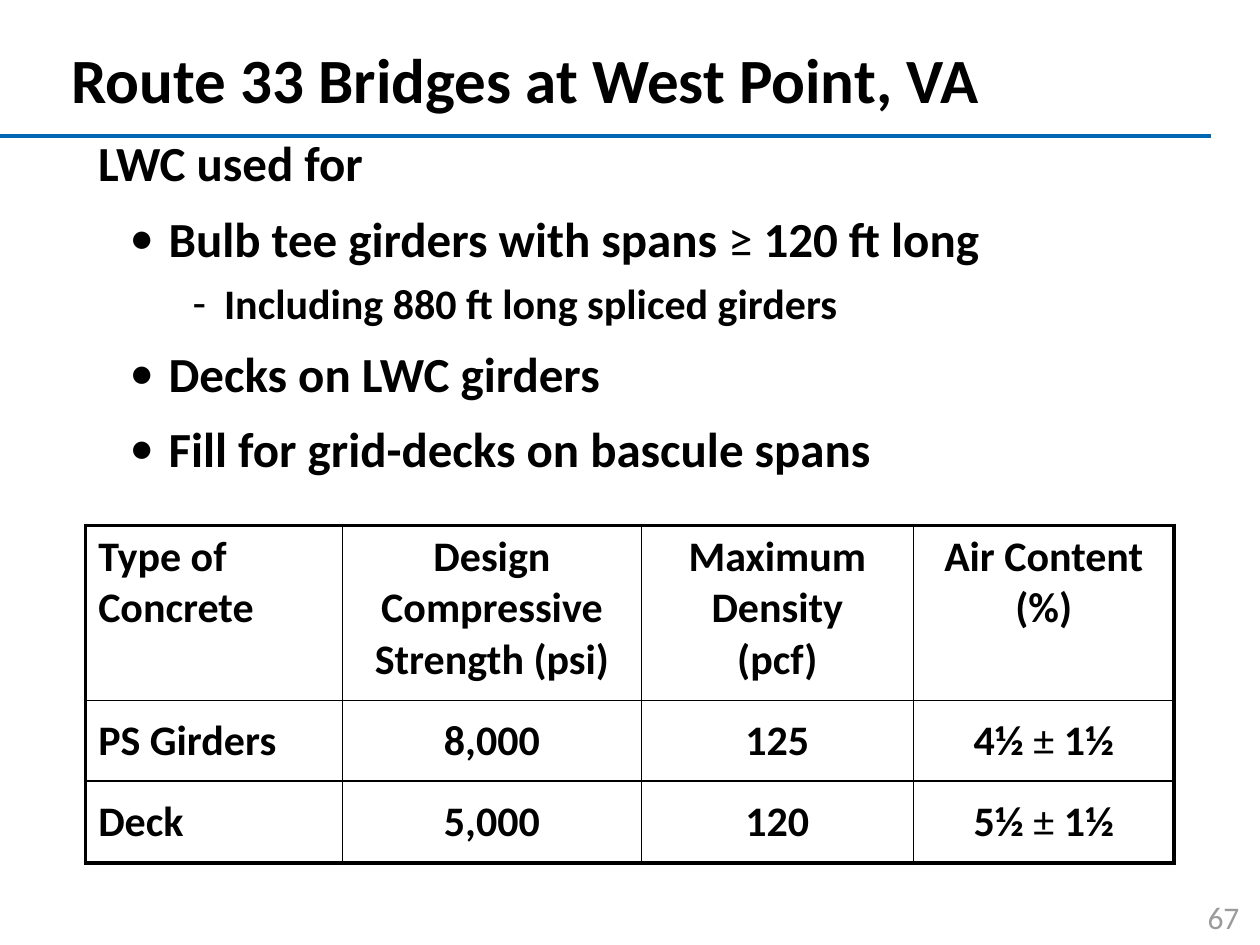
from dataclasses import dataclass

from lxml import etree
from pptx import Presentation
from pptx.dml.color import RGBColor
from pptx.enum.shapes import MSO_CONNECTOR
from pptx.enum.text import MSO_ANCHOR, PP_ALIGN
from pptx.oxml.ns import qn
from pptx.util import Inches, Pt

STRAIGHT = MSO_CONNECTOR.STRAIGHT
LEFT, CENTER = PP_ALIGN.LEFT, PP_ALIGN.CENTER
TOP, MIDDLE = MSO_ANCHOR.TOP, MSO_ANCHOR.MIDDLE


@dataclass(frozen=True)
class Theme:
    """Colours, font and sizes of the slide."""
    font: str = "Calibri"
    ink: str = "000000"
    rule: str = "0068B3"
    muted: str = "9B9B9B"
    title: int = 36
    body: int = 28
    detail: int = 24
    number: int = 18
    thick: float = 2.25
    thin: float = 1


THEME = Theme()
LIGHT_SYMBOLS = ("≥", "± ")
BULLETS = {1: ("•", 0.56, -0.31), 2: ("‐", 1, -0.25)}
POINTS = [
    (0, THEME.body, 0, ["LWC used for"]),
    (1, THEME.body, 9.8, ["Bulb tee girders with spans ", "≥", " 120 ft long"]),
    (2, THEME.detail, 6, ["Including 880 ft long spliced girders"]),
    (1, THEME.body, 9, ["Decks on LWC girders"]),
    (1, THEME.body, 9, ["Fill for grid-decks on bascule spans"]),
]
COLUMN_WIDTHS = [2.04, 2.37, 2.16, 2.07]
ROW_HEIGHTS = [1.39, 0.64, 0.65]
CONCRETE_ROWS = [
    [["Type of Concrete"], ["Design Compressive Strength (psi)"],
     ["Maximum Density\v(pcf)"], ["Air Content\v(%)"]],
    [["PS Girders"], ["8,000"], ["125"], ["4½ ", "± ", "1½"]],
    [["Deck"], ["5,000"], ["120"], ["5½ ", "± ", "1½"]],
]


def style_run(run, size, color=THEME.ink, bold=True):
    """Apply the theme font to a run."""
    run.font.name = THEME.font
    run.font.size = Pt(size)
    run.font.bold = bold
    run.font.color.rgb = RGBColor.from_string(color)


def write_spans(para, spans, size):
    """Write bold spans, leaving mathematical symbols light."""
    para.text = spans[0]
    for span in spans[1:]:
        para.add_run().text = span
    for run in para.runs:
        style_run(run, size, bold=run.text not in LIGHT_SYMBOLS)


def add_box(page, left, top, width, height, anchor=TOP):
    """Add a wrapping text box and return its text frame."""
    box = page.shapes.add_textbox(Inches(left), Inches(top), Inches(width), Inches(height))
    frame = box.text_frame
    frame.word_wrap = True
    frame.vertical_anchor = anchor
    return frame


def add_rule(page):
    """Draw the blue line below the title."""
    rule = page.shapes.add_connector(STRAIGHT, 0, Inches(1.08), Inches(9.61), Inches(1.08))
    rule.line.color.rgb = RGBColor.from_string(THEME.rule)
    rule.line.width = Pt(2.5)
    etree.SubElement(rule._element.spPr, qn("a:effectLst"))


def add_title(page, text):
    """Add the slide title."""
    para = add_box(page, 0.47, 0.32, 9.08, 0.68, MIDDLE).paragraphs[0]
    para.line_spacing = 0.9
    write_spans(para, [text], THEME.title)


def add_page_number(page, text):
    """Add the grey page number."""
    para = add_box(page, 9.42, 7.08, 0.58, 0.42).paragraphs[0]
    para.text = text
    para.alignment = CENTER
    style_run(para.runs[0], THEME.number, THEME.muted, False)


def set_bullet(para, level):
    """Give a paragraph the bullet and indent of its level."""
    mark, margin, indent = BULLETS[level]
    para.level = level
    properties = para._p.get_or_add_pPr()
    properties.set("marL", str(Inches(margin)))
    properties.set("indent", str(Inches(indent)))
    etree.SubElement(properties, qn("a:buFont"), typeface=THEME.font)
    etree.SubElement(properties, qn("a:buChar"), char=mark)


def add_points(page):
    """Add the list of uses."""
    frame = add_box(page, 0.68, 1, 8.85, 2.95)
    for index, (level, size, gap, spans) in enumerate(POINTS):
        para = frame.add_paragraph() if index else frame.paragraphs[0]
        write_spans(para, spans, size)
        para.space_before = Pt(gap)
        if level:
            set_bullet(para, level)


def set_borders(cell, outer_edges):
    """Draw cell borders, thick where the edge is on the outside."""
    properties = cell._tc.get_or_add_tcPr()
    for index, (edge, outer) in enumerate(outer_edges.items()):
        width = Pt(THEME.thick if outer else THEME.thin)
        line = etree.Element(qn(f"a:ln{edge}"), w=str(width))
        fill = etree.SubElement(line, qn("a:solidFill"))
        etree.SubElement(fill, qn("a:srgbClr"), val=THEME.ink)
        properties.insert(index, line)


def add_concrete_table(page):
    """Add the table of concrete properties."""
    rows, columns = len(ROW_HEIGHTS), len(COLUMN_WIDTHS)
    table = page.shapes.add_table(
        rows, columns, Inches(0.68), Inches(4.17),
        Inches(sum(COLUMN_WIDTHS)), Inches(sum(ROW_HEIGHTS))).table
    table.first_row = table.horz_banding = False
    for column, width in zip(table.columns, COLUMN_WIDTHS):
        column.width = Inches(width)
    for row, height in zip(table.rows, ROW_HEIGHTS):
        row.height = Inches(height)
    for r, row in enumerate(CONCRETE_ROWS):
        for c, spans in enumerate(row):
            cell = table.cell(r, c)
            cell.fill.background()
            cell.vertical_anchor = MIDDLE if r else TOP
            para = cell.text_frame.paragraphs[0]
            para.alignment = CENTER if c else LEFT
            write_spans(para, spans, THEME.detail)
            set_borders(cell, {"L": c == 0, "R": c == columns - 1,
                               "T": r == 0, "B": r == rows - 1})


def main():
    """Build and save the slide."""
    deck = Presentation()
    deck.slide_width, deck.slide_height = Inches(10), Inches(7.5)
    page = deck.slides.add_slide(deck.slide_layouts[6])
    add_rule(page)
    add_page_number(page, "67")
    add_title(page, "Route 33 Bridges at West Point, VA")
    add_concrete_table(page)
    add_points(page)
    deck.save("out.pptx")


if __name__ == "__main__":
    main()
